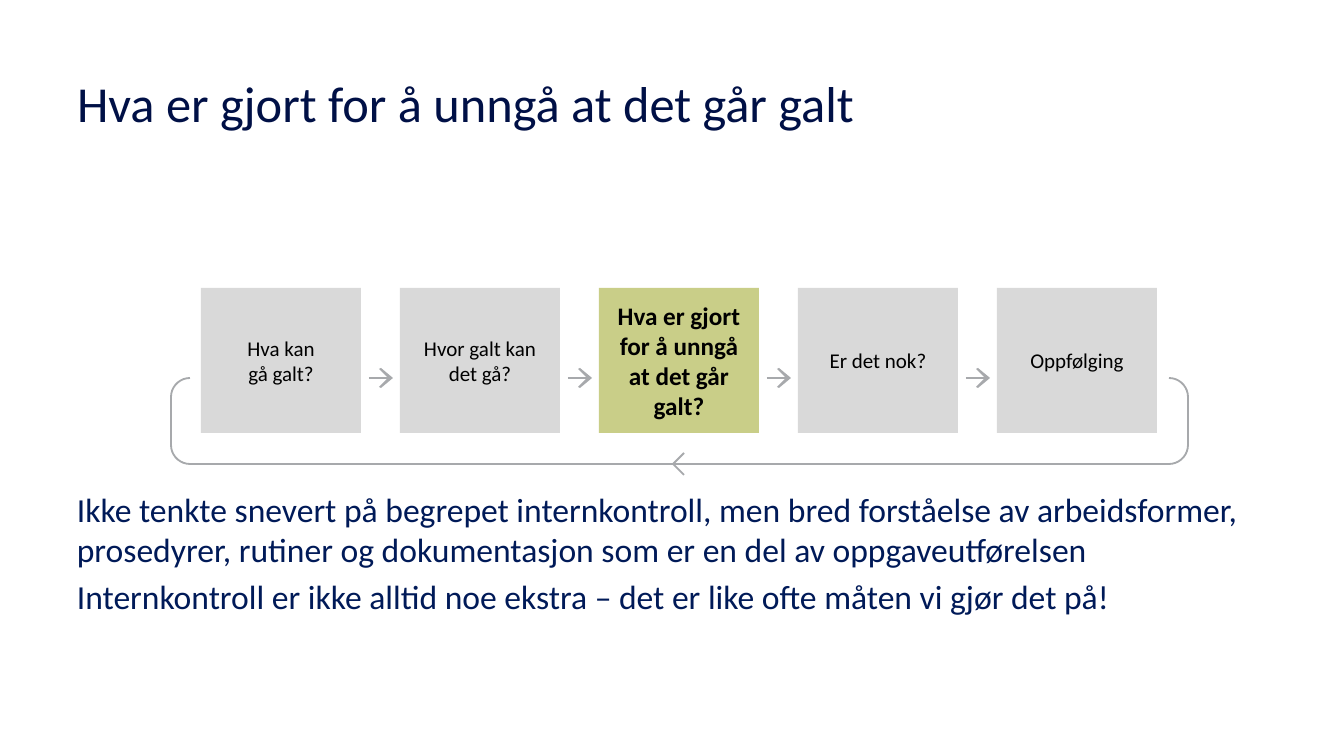
from dataclasses import dataclass
from math import cos, radians, sin

from lxml.etree import SubElement
from pptx import Presentation
from pptx.dml.color import RGBColor
from pptx.enum.shapes import MSO_CONNECTOR, MSO_SHAPE
from pptx.enum.text import MSO_ANCHOR, PP_ALIGN
from pptx.oxml.ns import qn
from pptx.util import Pt

TITLE = "Hva er gjort for å unngå at det går galt"
STEPS = [
    ["Hva kan", "gå galt?"],
    ["Hvor galt kan det gå?"],
    ["Hva er gjort for å unngå at det går galt?"],
    ["Er det nok?"],
    ["Oppfølging"],
]
CURRENT_STEP = 2
REMARKS = [
    "Ikke tenkte snevert på begrepet internkontroll, men bred forståelse av "
    "arbeidsformer, prosedyrer, rutiner og dokumentasjon som er en del av "
    "oppgaveutførelsen",
    "Internkontroll er ikke alltid noe ekstra – det er like ofte måten vi gjør det på!",
]


@dataclass(frozen=True)
class Theme:
    font: str = "Calibri"
    title: RGBColor = RGBColor(0x00, 0x10, 0x46)
    remark: RGBColor = RGBColor(0x00, 0x1A, 0x58)
    step_text: RGBColor = RGBColor(0, 0, 0)
    step: RGBColor = RGBColor(0xD9, 0xD9, 0xD9)
    current: RGBColor = RGBColor(0xC9, 0xCE, 0x88)
    arrow: RGBColor = RGBColor(0xA7, 0xA9, 0xAC)
    title_size: float = 36
    remark_size: float = 24
    step_size: float = 15
    current_size: float = 18
    shaft_width: float = 1.2
    loop_width: float = 1.3


THEME = Theme()
EMU_PER_PX = 914400 / 100.8

# Lengths in px
SLIDE = (1344, 756)
TITLE_BOX = (67, 40, 1210, 125)
REMARK_BOX = (67, 484, 1210, 167)
STEP_LEFT, STEP_TOP, STEP_WIDTH, STEP_HEIGHT, STEP_PITCH = 201, 288, 160, 145, 199
STEP_MARGIN = 12
FLOW_Y = 378
ARROW_OFFSET, SHAFT_LENGTH = 168, 20
ARROW_HEAD = [(12, -10), (10, -9), (19, 0), (10, 9), (12, 10), (24, 0)]
LOOP_LEFT, LOOP_RIGHT, LOOP_BOTTOM, LOOP_RADIUS = 171, 1188, 464, 19
LOOP_TIP = [(684, 475), (673, 464), (684, 453)]


def px(*lengths):
    return [round(length * EMU_PER_PX) for length in lengths]


def write(frame, lines, size, color, align, bold=False, gap=0):
    frame.word_wrap = True
    for i, line in enumerate(lines):
        paragraph = frame.paragraphs[0] if i == 0 else frame.add_paragraph()
        paragraph.text = line
        paragraph.alignment = align
        paragraph.space_before = Pt(gap if i else 0)
        font = paragraph.font
        font.name, font.size, font.bold = THEME.font, Pt(size), bold
        font.color.rgb = color


def draw_path(shapes, points, closed=False):
    """Draw a filled outline if closed, otherwise an open line."""
    start, *rest = [px(*point) for point in points]
    builder = shapes.build_freeform(*start)
    builder.add_line_segments(rest, close=closed)
    shape = builder.convert_to_shape()
    shape.shadow.inherit = False
    if closed:
        shape.fill.solid()
        shape.fill.fore_color.rgb = THEME.arrow
        shape.line.fill.background()
    else:
        shape.fill.background()
        shape.line.color.rgb = THEME.arrow
        shape.line.width = Pt(THEME.loop_width)


def corner(x, y, first_angle):
    """Points of a quarter circle round (x, y), turning clockwise."""
    angles = [radians(first_angle + step) for step in range(0, 91, 10)]
    return [(x + LOOP_RADIUS * cos(a), y + LOOP_RADIUS * sin(a)) for a in angles]


def draw_return_loop(shapes):
    left, right = LOOP_LEFT + LOOP_RADIUS, LOOP_RIGHT - LOOP_RADIUS
    top, bottom = FLOW_Y + LOOP_RADIUS, LOOP_BOTTOM - LOOP_RADIUS
    corners = [(right, top), (right, bottom), (left, bottom), (left, top)]
    draw_path(shapes, [point for i, (x, y) in enumerate(corners)
                       for point in corner(x, y, 90 * i - 90)])
    draw_path(shapes, LOOP_TIP)


def draw_arrow(shapes, left):
    shaft = shapes.add_connector(
        MSO_CONNECTOR.STRAIGHT, *px(left, FLOW_Y, left + SHAFT_LENGTH, FLOW_Y))
    shaft.line.color.rgb = THEME.arrow
    shaft.line.width = Pt(THEME.shaft_width)
    SubElement(shaft.element.spPr, qn("a:effectLst"))
    draw_path(shapes, [(left + x, FLOW_Y + y) for x, y in ARROW_HEAD], closed=True)


def draw_step(shapes, left, lines, current):
    box = shapes.add_shape(
        MSO_SHAPE.RECTANGLE, *px(left, STEP_TOP, STEP_WIDTH, STEP_HEIGHT))
    box.shadow.inherit = False
    box.fill.solid()
    box.fill.fore_color.rgb = THEME.current if current else THEME.step
    box.line.fill.background()
    frame = box.text_frame
    frame.vertical_anchor = MSO_ANCHOR.MIDDLE
    frame.margin_left = frame.margin_right = px(STEP_MARGIN)[0]
    write(frame, lines, THEME.current_size if current else THEME.step_size,
          THEME.step_text, PP_ALIGN.CENTER, bold=current)


def main():
    deck = Presentation()
    deck.slide_width, deck.slide_height = px(*SLIDE)
    slide = deck.slides.add_slide(deck.slide_layouts[5])
    shapes = slide.shapes

    title = shapes.title
    title.left, title.top, title.width, title.height = px(*TITLE_BOX)
    title.text_frame.vertical_anchor = MSO_ANCHOR.MIDDLE
    write(title.text_frame, [TITLE], THEME.title_size, THEME.title, PP_ALIGN.LEFT)

    draw_return_loop(shapes)
    for i, lines in enumerate(STEPS):
        left = STEP_LEFT + i * STEP_PITCH
        draw_step(shapes, left, lines, i == CURRENT_STEP)
        if i < len(STEPS) - 1:
            draw_arrow(shapes, left + ARROW_OFFSET)

    remarks = shapes.add_textbox(*px(*REMARK_BOX))
    write(remarks.text_frame, REMARKS, THEME.remark_size, THEME.remark,
          PP_ALIGN.LEFT, gap=THEME.remark_size * 0.2)

    deck.save("out.pptx")


if __name__ == "__main__":
    main()
